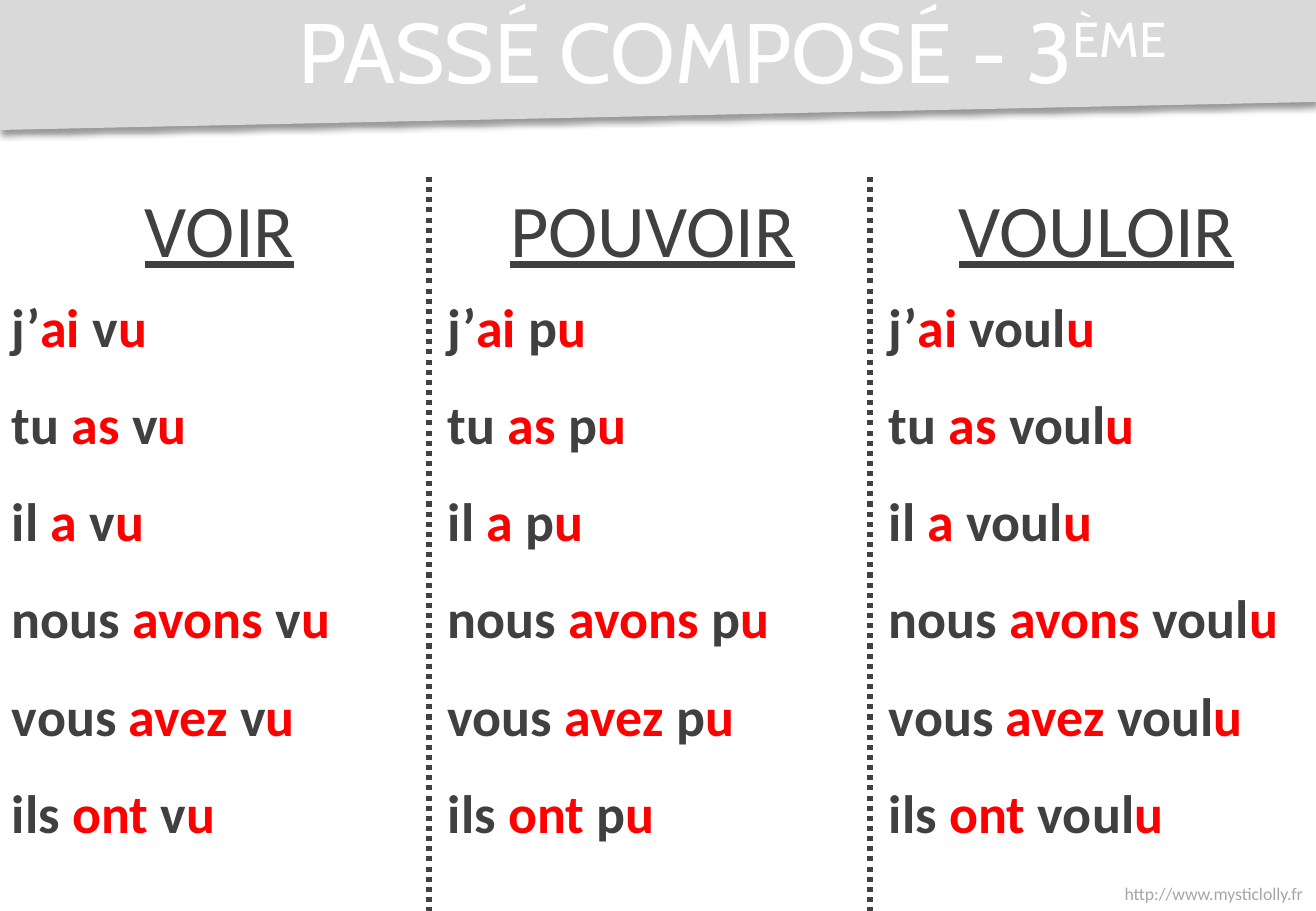
from lxml.etree import SubElement
from pptx import Presentation
from pptx.dml.color import RGBColor
from pptx.enum.dml import MSO_LINE_DASH_STYLE as Dash
from pptx.enum.shapes import MSO_CONNECTOR_TYPE as Connector
from pptx.enum.text import MSO_ANCHOR as Anchor, MSO_AUTO_SIZE as AutoSize, PP_ALIGN as Align
from pptx.oxml.ns import qn
from pptx.util import Pt

# Content
TITLE = [("PASSÉ COMPOSÉ - 3", 0), ("ÈME ", 30000)]
SITE = "http://www.mysticlolly.fr"
AUXILIARIES = [("j’", "ai"), ("tu ", "as"), ("il ", "a"),
               ("nous ", "avons"), ("vous ", "avez"), ("ils ", "ont")]
# verb, participle stem, heading left, list left, list width
VERBS = [("VOIR", "v", 0, 0, 439),
         ("POUVOIR", "p", 433, 436, 451),
         ("VOULOIR", "voul", 877, 877, 439)]
ENDING = "u"

# Layout in px
PX = 914400 / 121.5
WIDTH, HEIGHT = 1316, 911
BANNER = [(0, 0), (WIDTH, 0), (WIDTH, 102), (0, 130)]
DIVIDERS = [429, 870]
COLUMN_TOP, HEADING_WIDTH, HEADING_HEIGHT = 177, 439, 102
LIST_TOP, LIST_HEIGHT = 255, 601

DARK = RGBColor(0x40, 0x40, 0x40)
RED = RGBColor(0xFF, 0x00, 0x00)
WHITE = RGBColor(0xFF, 0xFF, 0xFF)
BANNER_GREY = RGBColor(0xD9, 0xD9, 0xD9)
SITE_GREY = RGBColor(0xA6, 0xA6, 0xA6)


def px(*lengths):
    return [round(length * PX) for length in lengths]


def add_box(page, left, top, width, height, align=Align.LEFT):
    box = page.shapes.add_textbox(*px(left, top, width, height))
    box.text_frame.word_wrap = True
    box.text_frame.paragraphs[0].alignment = align
    return box.text_frame


def add_span(para, text, size, color, name="Calibri"):
    span = para.add_run()
    span.text = text
    span.font.size, span.font.name = Pt(size), name
    span.font.color.rgb = color
    return span


def add_banner(page):
    builder = page.shapes.build_freeform(*BANNER[0], scale=PX)
    builder.add_line_segments(BANNER[1:], close=True)
    banner = builder.convert_to_shape()
    banner.fill.solid()
    banner.fill.fore_color.rgb = BANNER_GREY
    banner.line.fill.background()
    banner.shadow.inherit = False
    effects = banner._element.spPr.find(qn("a:effectLst"))
    shadow = SubElement(effects, qn("a:outerShdw"), blurRad=str(Pt(4)), dist=str(Pt(3)),
                        dir="5400000", algn="t", rotWithShape="0")
    black = SubElement(shadow, qn("a:srgbClr"), val="000000")
    SubElement(black, qn("a:alpha"), val="40000")


def add_verb(page, verb, stem, heading_left, list_left, list_width):
    heading = add_box(page, heading_left, COLUMN_TOP, HEADING_WIDTH, HEADING_HEIGHT, Align.CENTER)
    heading.auto_size = AutoSize.SHAPE_TO_FIT_TEXT
    add_span(heading.paragraphs[0], verb, 44, DARK).font.underline = True

    forms = add_box(page, list_left, LIST_TOP, list_width, LIST_HEIGHT)
    forms.auto_size = AutoSize.SHAPE_TO_FIT_TEXT
    for row, (pronoun, auxiliary) in enumerate(AUXILIARIES):
        para = forms.add_paragraph() if row else forms.paragraphs[0]
        para.line_spacing = 1.5
        for text, color in [(pronoun, DARK), (auxiliary, RED), (f" {stem}", DARK), (ENDING, RED)]:
            add_span(para, text, 32, color).font.bold = True


def add_divider(page, x):
    divider = page.shapes.add_connector(Connector.STRAIGHT, *px(x, COLUMN_TOP, x, HEIGHT))
    divider.line.color.rgb = DARK
    divider.line.width = Pt(3)
    divider.line.dash_style = Dash.ROUND_DOT
    SubElement(divider._element.spPr, qn("a:effectLst"))


def main():
    deck = Presentation()
    deck.slide_width, deck.slide_height = px(WIDTH, HEIGHT)
    page = deck.slides.add_slide(deck.slide_layouts[6])

    # Banner and site address
    add_banner(page)
    site = add_box(page, 1019, 877, 296, 34, Align.RIGHT)
    add_span(site.paragraphs[0], SITE, 10.5, SITE_GREY)

    # Verb columns
    for verb in VERBS:
        add_verb(page, *verb)
    for x in DIVIDERS:
        add_divider(page, x)

    # Title
    title = add_box(page, 160, -2, 1156, 103, Align.CENTER)
    title.vertical_anchor = Anchor.MIDDLE
    for text, baseline in TITLE:
        span = add_span(title.paragraphs[0], text, 50, WHITE, "Cabin")
        if baseline:
            span._r.get_or_add_rPr().set("baseline", str(baseline))

    deck.save("out.pptx")


if __name__ == "__main__":
    main()
